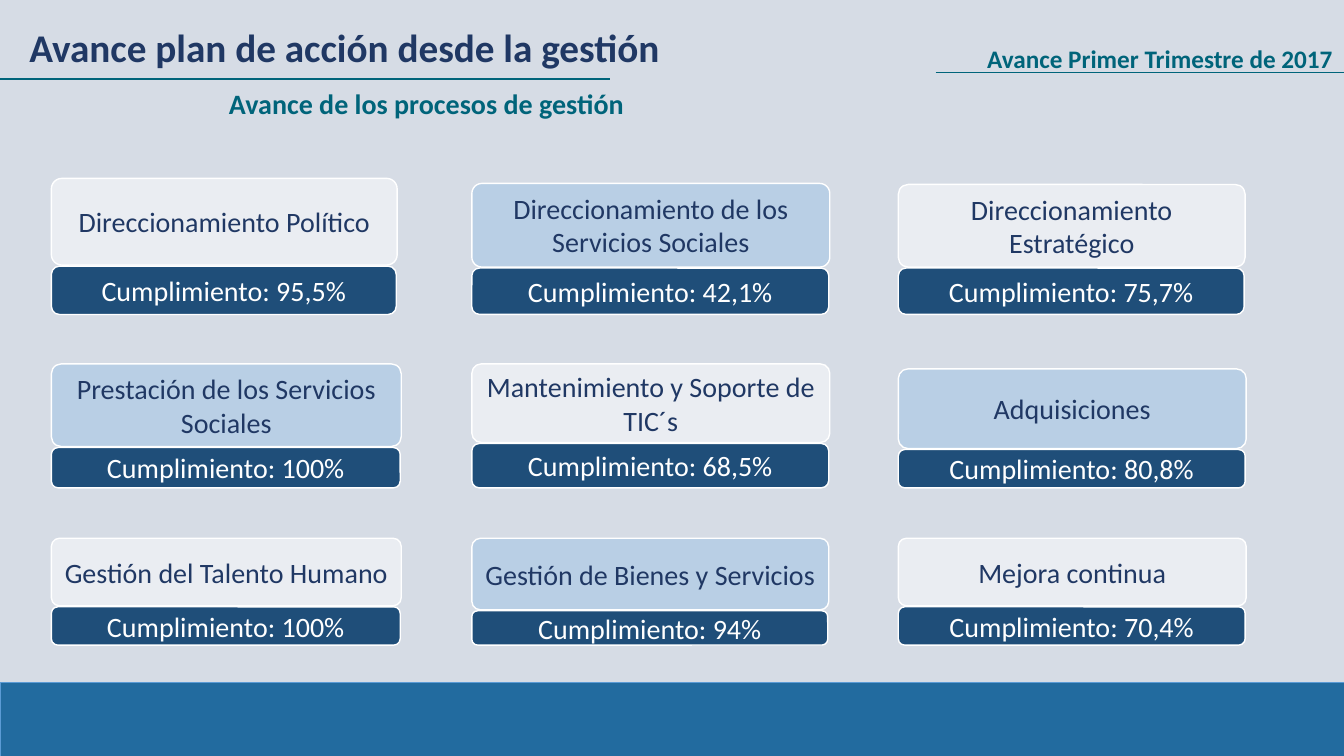
from lxml import etree
from pptx import Presentation
from pptx.dml.color import RGBColor
from pptx.enum.shapes import MSO_CONNECTOR, MSO_SHAPE
from pptx.enum.text import MSO_ANCHOR, MSO_AUTO_SIZE, PP_ALIGN
from pptx.oxml.ns import qn
from pptx.util import Pt

STRAIGHT = MSO_CONNECTOR.STRAIGHT
RECTANGLE = MSO_SHAPE.RECTANGLE
ROUNDED = MSO_SHAPE.ROUNDED_RECTANGLE
TOP = MSO_ANCHOR.TOP
MIDDLE = MSO_ANCHOR.MIDDLE
GROW = MSO_AUTO_SIZE.SHAPE_TO_FIT_TEXT
CENTER = PP_ALIGN.CENTER

EMU_PER_PX = 9144
FONT = "Calibri"
NAVY = "203864"
TEAL = "00647A"
WHITE = "FFFFFF"
LIGHT_BLUE = "9DC3E6"
DARK_BLUE = "1F4E79"

COLUMN_LEFTS = (51, 468, 891)
ROW_BOTTOMS = (312, 484, 640)
CARD_BAR_GAP = 1
PROCESSES = (
    (
        ("Direccionamiento Político", "95,5%", 177, 343, 86, MIDDLE),
        ("Direccionamiento de los Servicios Sociales", "42,1%", 182, 355, 83, TOP),
        ("Direccionamiento Estratégico", "75,7%", 183, 344, 82, MIDDLE),
    ),
    (
        ("Prestación de los Servicios Sociales", "100%", 361, 347, 82, TOP),
        ("Mantenimiento y Soporte de TIC´s", "68,5%", 361, 355, 78, MIDDLE),
        ("Adquisiciones", "80,8%", 366, 345, 79, MIDDLE),
    ),
    (
        ("Gestión del Talento Humano", "100%", 534, 347, 67, MIDDLE),
        ("Gestión de Bienes y Servicios", "94%", 534, 354, 71, MIDDLE),
        ("Mejora continua", "70,4%", 534, 345, 67, MIDDLE),
    ),
)


def px(length):
    return length * EMU_PER_PX


def color(hex_string):
    return RGBColor.from_string(hex_string)


def write(shape, text, size=20, ink=NAVY, bold=False, anchor=MIDDLE, wrap=True):
    frame = shape.text_frame
    frame.word_wrap = wrap
    frame.vertical_anchor = anchor
    para = frame.paragraphs[0]
    para.alignment = CENTER
    span = para.add_run()
    span.text = text
    span.font.name = FONT
    span.font.size = Pt(size)
    span.font.bold = bold
    span.font.color.rgb = color(ink)


class SlideBuilder:
    def __init__(self, page, background):
        self.page = page
        page.background.fill.solid()
        page.background.fill.fore_color.rgb = color(background)

    def box(self, bounds, fill, outline=WHITE, weight=1, kind=ROUNDED,
            corner=None, opacity=100):
        shape = self.page.shapes.add_shape(kind, *map(px, bounds))
        shape.shadow.inherit = False
        shape.fill.solid()
        shape.fill.fore_color.rgb = color(fill)
        shape.line.color.rgb = color(outline)
        shape.line.width = Pt(weight)
        if corner is not None:
            shape.adjustments[0] = corner
        if opacity < 100:
            tint = shape._element.spPr.find(qn("a:solidFill"))[0]
            etree.SubElement(tint, qn("a:alpha"), val=str(opacity * 1000))
        return shape

    def label(self, bounds, text, size):
        shape = self.page.shapes.add_textbox(*map(px, bounds))
        ink = NAVY if size == 28 else TEAL
        write(shape, text, size=size, ink=ink, bold=True, anchor=TOP, wrap=False)
        shape.text_frame.auto_size = GROW

    def rule(self, left, right, top, weight):
        line = self.page.shapes.add_connector(
            STRAIGHT, px(left), px(top), px(right), px(top))
        line.line.color.rgb = color(TEAL)
        line.line.width = Pt(weight)
        etree.SubElement(line._element.spPr, qn("a:effectLst"))

    def process(self, left, bottom, fill, name, value, top, width, height, anchor):
        card = self.box((left, top, width, height), fill, corner=0.12, opacity=50)
        write(card, name, anchor=anchor)
        bar_top = top + height + CARD_BAR_GAP
        bar = self.box((left, bar_top, width - 1, bottom - bar_top), DARK_BLUE)
        write(bar, f"Cumplimiento: {value}", ink=WHITE)


def main():
    deck = Presentation()
    deck.slide_width = px(1333)
    deck.slide_height = px(750)
    builder = SlideBuilder(deck.slides.add_slide(deck.slide_layouts[6]), "D6DCE5")

    builder.box((0, 677, 1333, 73), "226B9F", outline="5B9BD5", weight=0.5,
                kind=RECTANGLE)
    builder.label((15, 18, 653, 57), "Avance plan de acción desde la gestión", 28)
    builder.rule(0, 605, 78, 1.5)
    builder.label((215, 81, 416, 44), "Avance de los procesos de gestión", 20)
    builder.label((965, 38, 371, 40), "Avance Primer Trimestre de 2017", 18)
    builder.rule(928, 1333, 72, 1)

    for row, (bottom, processes) in enumerate(zip(ROW_BOTTOMS, PROCESSES)):
        for column, (left, process) in enumerate(zip(COLUMN_LEFTS, processes)):
            fill = LIGHT_BLUE if (row + column) % 2 else WHITE
            builder.process(left, bottom, fill, *process)

    deck.save("out.pptx")


if __name__ == "__main__":
    main()
